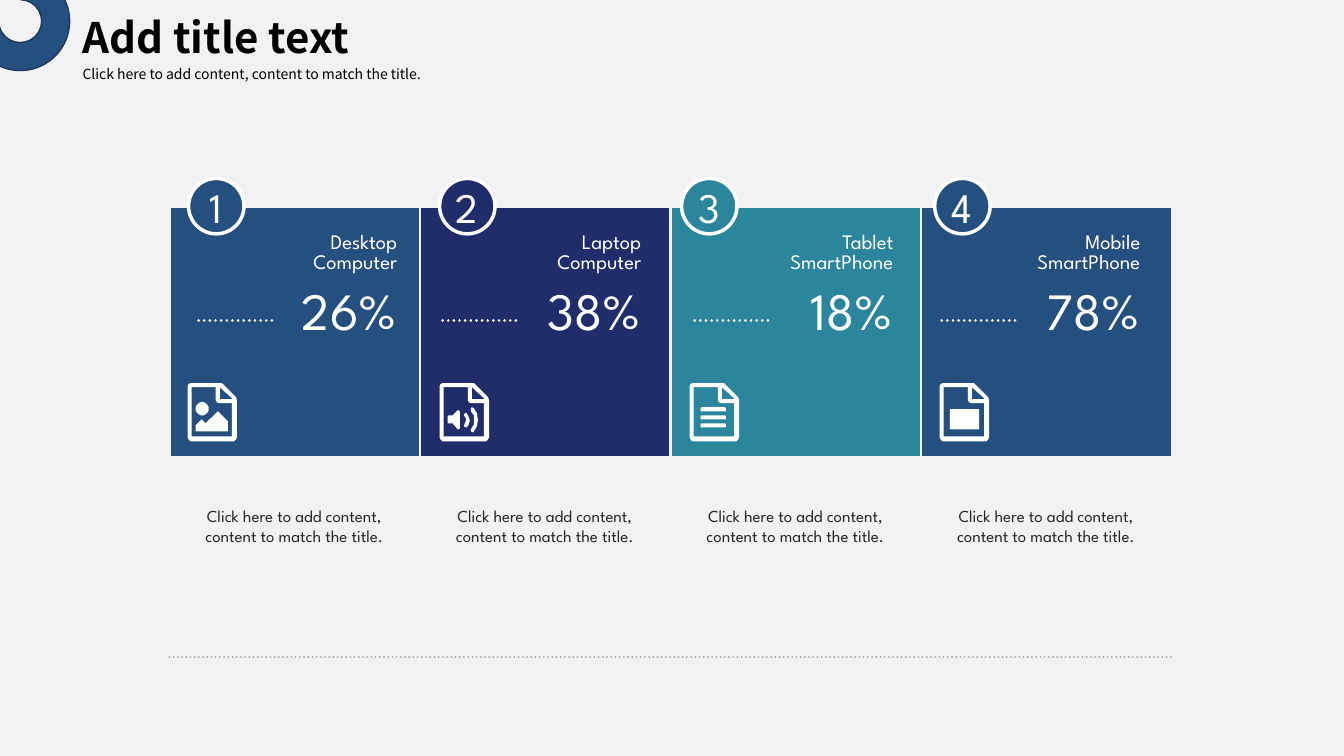
from math import cos, sin, tau

from lxml.etree import SubElement
from pptx import Presentation
from pptx.dml.color import RGBColor
from pptx.enum.dml import MSO_LINE
from pptx.enum.shapes import MSO_CONNECTOR, MSO_SHAPE as SHAPE
from pptx.enum.text import MSO_ANCHOR as ANCHOR, MSO_AUTO_SIZE as AUTO_SIZE, PP_ALIGN as ALIGN
from pptx.oxml.ns import qn
from pptx.util import Inches, Pt

BLUE = RGBColor(0x25, 0x4F, 0x7F)
DARK_BLUE = RGBColor(0x1B, 0x3A, 0x5E)
NAVY = RGBColor(0x21, 0x2C, 0x6A)
TEAL = RGBColor(0x2B, 0x85, 0x9C)
PALE = RGBColor(0xF2, 0xF2, 0xF2)
WHITE = RGBColor(0xFF, 0xFF, 0xFF)
BLACK = RGBColor(0, 0, 0)
CHARCOAL = RGBColor(0x26, 0x26, 0x26)
GREY = RGBColor(0xA0, 0xAA, 0xB4)

HEAD_FONT = "Noto Sans CJK SC"
CARD_FONT = "League Spartan"
HINT = "Click here to add content, content to match the title."

HEADING_FRAME = dict(word_wrap=True, auto_size=AUTO_SIZE.SHAPE_TO_FIT_TEXT,
                     vertical_anchor=ANCHOR.TOP)
CARD_FRAME = dict(word_wrap=True, vertical_anchor=ANCHOR.MIDDLE, margin_left=0,
                  margin_top=0, margin_right=0, margin_bottom=0)


def write_text(box, text, frame_format, font, size, color, bold=False,
               align=ALIGN.LEFT, spacing=1.0):
    frame = box.text_frame
    frame.text = text
    paragraph = frame.paragraphs[0]
    formats = (
        (frame, frame_format),
        (paragraph, dict(alignment=align, line_spacing=spacing)),
        (paragraph.runs[0].font, dict(name=font, size=Pt(size), bold=bold)),
    )
    for target, values in formats:
        for name, value in values.items():
            setattr(target, name, value)
    paragraph.runs[0].font.color.rgb = color


def paint(shape, fill, outline=None, width=0):
    shape.shadow.inherit = False
    shape.fill.solid()
    shape.fill.fore_color.rgb = fill
    if outline is None:
        shape.line.fill.background()
    else:
        shape.line.color.rgb = outline
        shape.line.width = Pt(width)


deck = Presentation()
deck.slide_width, deck.slide_height = Inches(13.33), Inches(7.5)
slide = deck.slides.add_slide(deck.slide_layouts[5])
slide.background.fill.solid()
slide.background.fill.fore_color.rgb = PALE
shapes = slide.shapes

# Heading
title = shapes.title
title.left, title.top = Inches(0.72), Inches(0.06)
title.width, title.height = Inches(3.51), Inches(0.61)
write_text(title, "Add title text", HEADING_FRAME, HEAD_FONT, 30, BLACK, bold=True)

subtitle = shapes.add_textbox(Inches(0.72), Inches(0.52), Inches(4.31), Inches(0.32))
write_text(subtitle, HINT, HEADING_FRAME, HEAD_FONT, 10, BLACK, spacing=1.5)

# Corner ring
ring = shapes.add_shape(SHAPE.BLOCK_ARC, Inches(-0.29), Inches(-0.28),
                        Inches(0.98), Inches(0.98))
ring.rotation = 90
for index, value in enumerate((108, 46.005, 0.283)):
    ring.adjustments[index] = value
paint(ring, BLUE, DARK_BLUE, 1)

# Icon outlines, in hundredths of an inch from the icon's corner
page = [
    [(49, 17), (49, 54), (48, 56.5), (45.5, 57.5), (3, 57.5), (1, 56.5), (0, 54),
     (0, 3), (1, 1), (3, 0), (31, 0), (34, 0.5), (36, 2), (46, 12), (48, 14.5)],
    [(44.5, 20), (31, 20), (29, 19), (28, 17), (28, 4), (3.7, 4), (3.7, 53), (44.5, 53)],
    [(32.5, 16.5), (44.5, 16.5), (43.5, 15), (34.5, 5.5), (32.5, 4.5)],
]
sun = [(14.5 + 6.3 * cos(tau * step / 24), 25.5 + 6.3 * sin(tau * step / 24))
       for step in range(24)]
hills = [(40, 48), (8, 48), (8, 42), (14, 36), (18, 40), (30, 28), (40, 38)]
speaker = [(20, 28), (20, 45), (19, 46.5), (18, 46.5), (13, 40), (9, 40), (8, 39.5),
           (8, 33), (9, 32), (13, 32), (18, 27), (19, 27)]
near_wave = [(27, 44), (29, 41), (30, 37), (29, 33.5), (27, 30), (25, 30), (24.5, 32),
             (26, 35), (26, 38.5), (25, 40.5), (24.5, 43), (26, 44.5)]
far_wave = [(34, 48), (37, 43), (38, 37), (37, 30), (34, 25), (32.5, 24), (31, 25),
            (31, 28), (33.5, 32), (34, 37), (33.5, 41), (31, 46), (31, 48), (33, 49)]
text_lines = [[(12, y), (35, y), (36, y + 1), (36, y + 3.5), (35, y + 4.5),
               (12, y + 4.5), (11, y + 3.5), (11, y + 1)] for y in (24, 32, 40)]
plain_block = [(10, 26), (39, 26), (39, 46), (10, 46)]

# Label, share, colour, then left edges of badge, label and icon, then icon drawing
cards = [
    ("Desktop Computer", "26%", BLUE, 1.87, 2.66, 1.86, [sun, hills]),
    ("Laptop Computer", "38%", NAVY, 4.36, 5.08, 4.36, [speaker, near_wave, far_wave]),
    ("Tablet SmartPhone", "18%", TEAL, 6.76, 7.58, 6.84, text_lines),
    ("Mobile SmartPhone", "78%", BLUE, 9.27, 10.03, 9.32, [plain_block]),
]
CARD_LEFT, CARD_PITCH, CARD_SIZE = 1.68, 2.485, 2.49
dotted_rules = [(1.68, 11.63, 6.52, GREY, 1.5)]

for number, (label, share, color, badge_x, label_x, icon_x, drawing) in enumerate(cards):
    card_x = CARD_LEFT + number * CARD_PITCH
    card = shapes.add_shape(SHAPE.RECTANGLE, Inches(card_x), Inches(2.05),
                            Inches(CARD_SIZE), Inches(CARD_SIZE))
    paint(card, color, PALE, 2)

    badge = shapes.add_shape(SHAPE.OVAL, Inches(badge_x), Inches(1.77),
                             Inches(0.55), Inches(0.55))
    paint(badge, color, WHITE, 2.5)

    # Texts on and below the card
    texts = [
        (str(number + 1), badge_x + 0.08, 1.78, 0.38, 0.55, 30, WHITE, ALIGN.CENTER, 1.0),
        (label, label_x, 2.26, 1.28, 0.51, 14.7, WHITE, ALIGN.RIGHT, 0.8),
        (share, label_x, 2.77, 1.28, 0.68, 37.4, WHITE, ALIGN.RIGHT, 0.9),
        (HINT, card_x + 0.2, 4.66, 2.08, 1.11, 12, CHARCOAL, ALIGN.CENTER, 1.0),
    ]
    for text, x, y, width, height, size, ink, align, spacing in texts:
        box = shapes.add_textbox(Inches(x), Inches(y), Inches(width), Inches(height))
        write_text(box, text, CARD_FRAME, CARD_FONT, size, ink,
                   align=align, spacing=spacing)
    dotted_rules.append((label_x - 0.69, label_x + 0.08, 3.18, WHITE, 2))

    # File icon
    outlines = page + drawing
    builder = shapes.build_freeform(*outlines[0][0], scale=Inches(0.01))
    for outline in outlines:
        builder.move_to(*outline[0])
        builder.add_line_segments(outline[1:], close=True)
    icon = builder.convert_to_shape(Inches(icon_x), Inches(3.8))
    paint(icon, WHITE)

# Dotted rules with round dots
for start, end, y, color, width in dotted_rules:
    rule = shapes.add_connector(MSO_CONNECTOR.STRAIGHT, Inches(start), Inches(y),
                                Inches(end), Inches(y))
    rule.line.color.rgb = color
    rule.line.width = Pt(width)
    rule.line.dash_style = MSO_LINE.ROUND_DOT
    rule.element.spPr.find(qn("a:ln")).set("cap", "rnd")
    SubElement(rule.element.spPr, qn("a:effectLst"))

deck.save("out.pptx")
